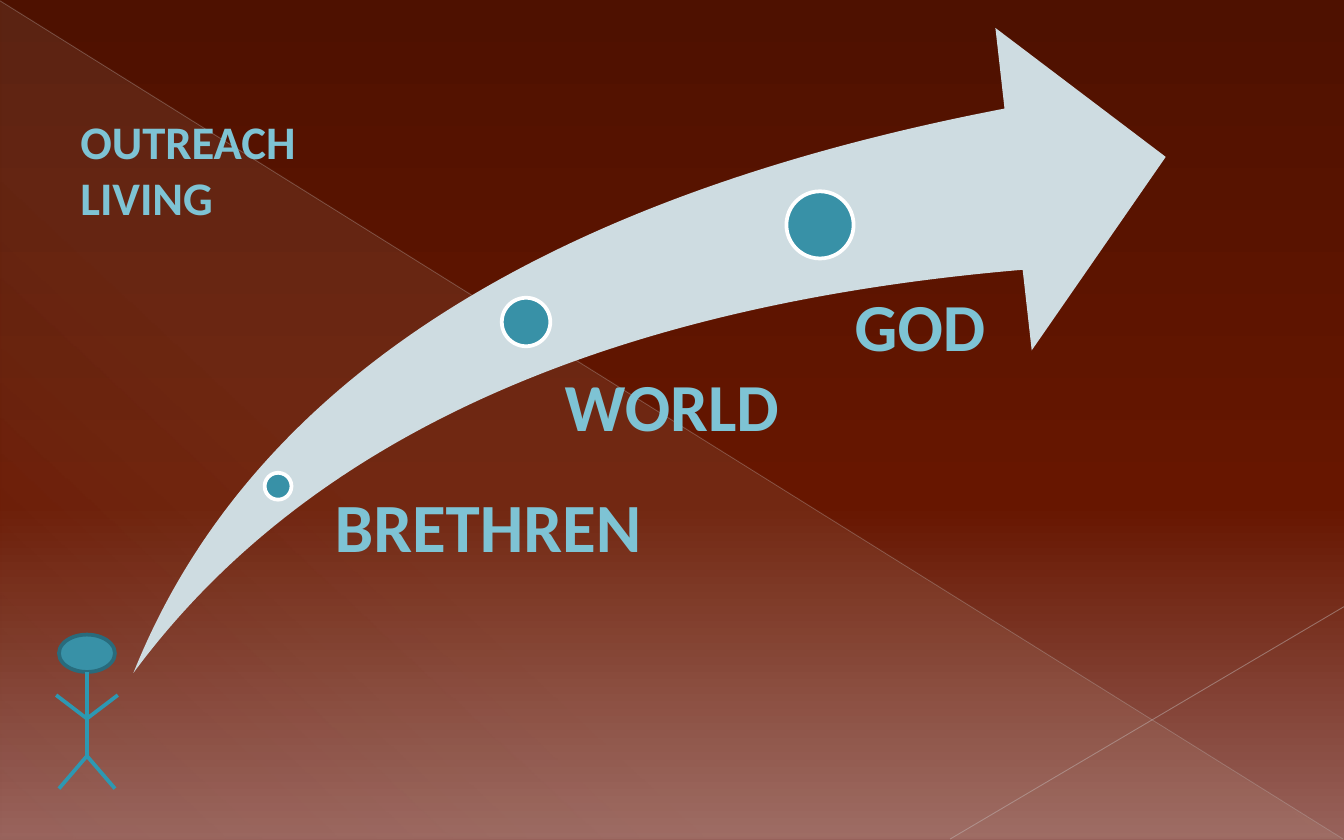
from dataclasses import dataclass

from lxml import etree
from pptx import Presentation
from pptx.dml.color import RGBColor
from pptx.enum.shapes import MSO_CONNECTOR, MSO_SHAPE
from pptx.enum.text import MSO_ANCHOR, MSO_AUTO_SIZE, PP_ALIGN
from pptx.oxml.ns import qn
from pptx.util import Pt

STRAIGHT = MSO_CONNECTOR.STRAIGHT
OVAL, SWOOSH = MSO_SHAPE.OVAL, MSO_SHAPE.SWOOSH_ARROW
TRIANGLE = MSO_SHAPE.RIGHT_TRIANGLE
LEFT, CENTER = PP_ALIGN.LEFT, PP_ALIGN.CENTER

FONT = "Calibri"
WHITE = RGBColor(0xFF, 0xFF, 0xFF)
TEAL = RGBColor(0x38, 0x91, 0xA7)
DARK_TEAL = RGBColor(0x29, 0x6B, 0x7C)
LIMB = RGBColor(0x2D, 0x98, 0xB2)
TEXT = RGBColor(0x7E, 0xC3, 0xD4)
ARROW = RGBColor(0xCE, 0xDC, 0xE1)
CREAM = RGBColor(0xE7, 0xDE, 0xC9)
LONG_RAY = RGBColor(0xBD, 0xB3, 0xB2)
SHORT_RAY = RGBColor(0xC5, 0xBC, 0xBB)
BROWN = RGBColor(0x4E, 0x11, 0x00)
RUST = RGBColor(0x67, 0x16, 0x00)
ROSE = RGBColor(0x97, 0x62, 0x5B)

Point = tuple[float, float]
Box = tuple[float, float, float, float]


@dataclass(frozen=True)
class Stop:
    position: int
    color: RGBColor
    opacity: int = 100


@dataclass(frozen=True)
class Milestone:
    center: Point
    diameter: float
    label: str
    box: Box
    inset: float
    size: float
    align: PP_ALIGN = LEFT


MILESTONES = [
    Milestone((149, 260.5), 14.4, "BRETHREN", (171.4, 264.2, 200, 56), 7.9, 37),
    Milestone((281.8, 172.5), 26, "WORLD", (242.6, 200.2, 221, 77), 13.7, 36, CENTER),
    Milestone((439.3, 120.5), 36, "GOD", (439.2, 157, 132.5, 102), 18.7, 36),
]


def set_opacity(color_element, percent: int) -> None:
    etree.SubElement(color_element, qn("a:alpha"), val=str(percent * 1000))


def set_gradient(fill, owner, stops: list[Stop], angle: float) -> None:
    """Fill with any number of stops; the angle runs clockwise."""
    fill.gradient()
    fill.gradient_angle = 360 - angle
    stop_list = owner.find(".//" + qn("a:gsLst"))
    for old in list(stop_list):
        stop_list.remove(old)
    for stop in stops:
        gs = etree.SubElement(stop_list, qn("a:gs"), pos=str(stop.position * 1000))
        color = etree.SubElement(gs, qn("a:srgbClr"), val=str(stop.color))
        if stop.opacity < 100:
            set_opacity(color, stop.opacity)


def add_shape(shapes, kind: MSO_SHAPE, box: Box, fill: RGBColor | None = None,
              outline: RGBColor | None = None):
    sp = shapes.add_shape(kind, *map(Pt, box))
    sp.shadow.inherit = False
    if fill is not None:
        sp.fill.solid()
        sp.fill.fore_color.rgb = fill
    if outline is None:
        sp.line.fill.background()
    else:
        sp.line.color.rgb = outline
        sp.line.width = Pt(2)
    return sp


def add_line(shapes, start: Point, end: Point, color: RGBColor,
             width: float = 2, opacity: int = 100) -> None:
    line = shapes.add_connector(STRAIGHT, *map(Pt, (*start, *end)))
    line.line.color.rgb = color
    line.line.width = Pt(width)
    properties = line._element.spPr
    if opacity < 100:
        set_opacity(properties.find(".//" + qn("a:srgbClr")), opacity)
    etree.SubElement(properties, qn("a:effectLst"))


def add_text(shapes, text: str, box: Box, size: float):
    sp = shapes.add_textbox(*map(Pt, box))
    tf = sp.text_frame
    tf.word_wrap = True
    tf.vertical_anchor = MSO_ANCHOR.TOP
    tf.text = text
    font = tf.paragraphs[0].runs[0].font
    font.name, font.size, font.bold = FONT, Pt(size), True
    font.color.rgb = TEXT
    return tf


def add_backdrop(slide) -> None:
    set_gradient(slide.background.fill, slide.element,
                 [Stop(0, BROWN), Stop(60, RUST), Stop(100, ROSE)], 90)
    triangle = add_shape(slide.shapes, TRIANGLE, (0.5, 0.5, 719, 449))
    set_gradient(triangle.fill, triangle.element,
                 [Stop(0, CREAM, 10), Stop(70, CREAM, 8), Stop(100, CREAM, 1)], 133)
    add_line(slide.shapes, (0, 0.5), (719.5, 449.5), LONG_RAY, 0.39, 35)
    add_line(slide.shapes, (720, 325), (509, 449.5), SHORT_RAY, 0.47, 45)


def add_stick_figure(slide) -> None:
    shapes = slide.shapes.add_group_shape().shapes
    x = 46.6
    neck, shoulder, hip = (x, 360), (x, 385), (x, 405)
    add_shape(shapes, OVAL, (x - 15, 340, 30, 20), TEAL, DARK_TEAL)
    add_line(shapes, neck, hip, LIMB)
    for side in (-1, 1):
        add_line(shapes, shoulder, (x + side * 16.5, 372.4), LIMB)
        add_line(shapes, hip, (x + side * 15, 422.5), LIMB)


def add_milestone(slide, milestone: Milestone) -> None:
    d = milestone.diameter
    x, y = milestone.center
    add_shape(slide.shapes, OVAL, (x - d / 2, y - d / 2, d, d), TEAL, WHITE)
    tf = add_text(slide.shapes, milestone.label, milestone.box, milestone.size)
    tf.margin_left = Pt(milestone.inset)
    tf.margin_top = tf.margin_right = tf.margin_bottom = 0
    p = tf.paragraphs[0]
    p.alignment = milestone.align
    p.line_spacing = 0.9


def main() -> None:
    prs = Presentation()
    prs.slide_width, prs.slide_height = Pt(720), Pt(450)
    slide = prs.slides.add_slide(prs.slide_layouts[6])
    add_backdrop(slide)
    add_stick_figure(slide)
    swoosh = add_shape(slide.shapes, SWOOSH, (71.5, 15, 553, 345.5), ARROW)
    swoosh.adjustments[0] = swoosh.adjustments[1] = 0.25
    for milestone in MILESTONES:
        add_milestone(slide, milestone)
    title = add_text(slide.shapes, "OUTREACH LIVING", (36, 57, 144, 67.7), 25)
    title.auto_size = MSO_AUTO_SIZE.SHAPE_TO_FIT_TEXT
    prs.save("out.pptx")


if __name__ == "__main__":
    main()
